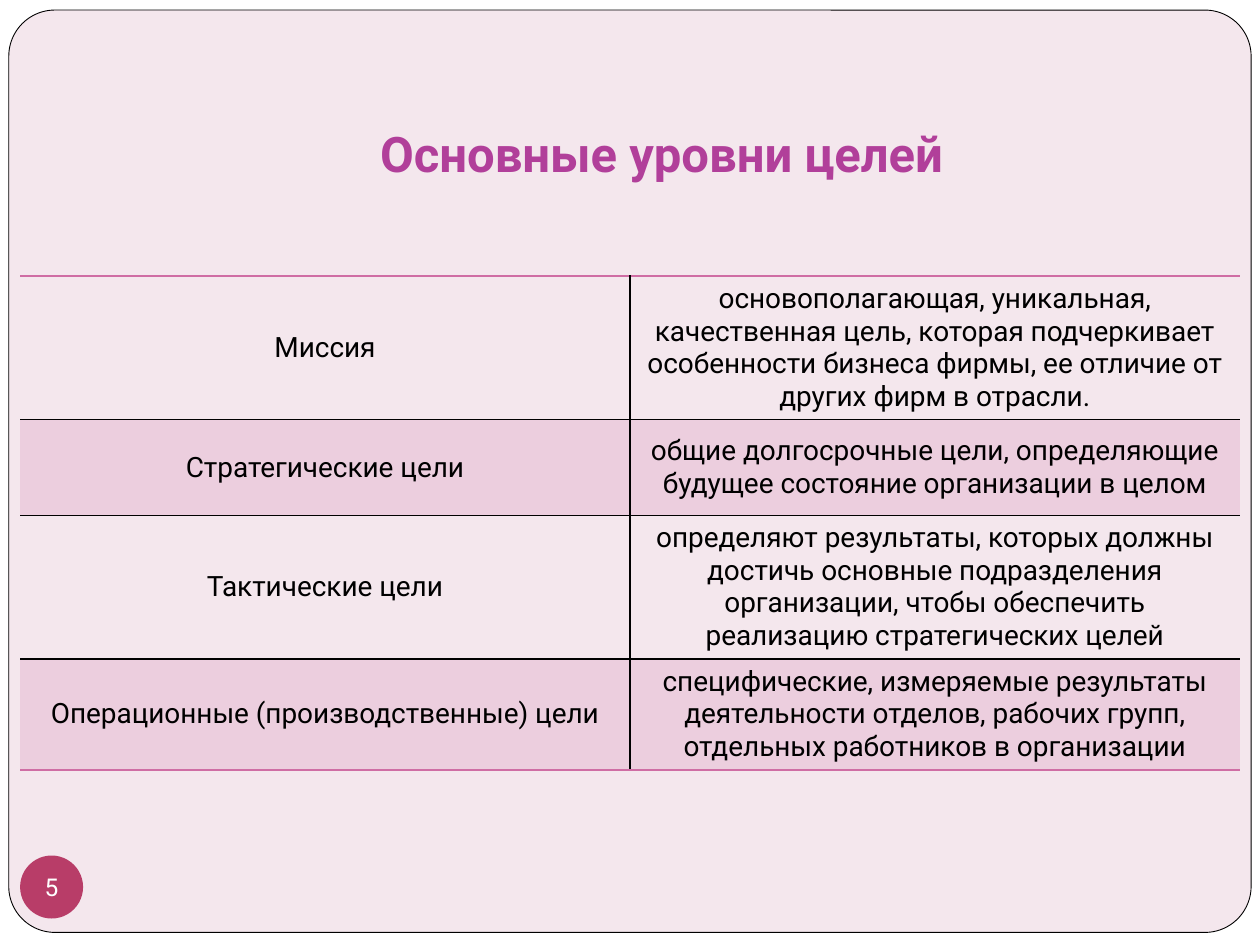
"""Build the slide on the main levels of goals."""
import pptx
import pptx.util
import pptx.dml.color
import pptx.enum.shapes
import pptx.enum.text
import pptx.oxml
import pptx.oxml.ns

Inches = pptx.util.Inches
RGBColor = pptx.dml.color.RGBColor
SHAPE = pptx.enum.shapes.MSO_SHAPE
ANCHOR = pptx.enum.text.MSO_ANCHOR

WHITE = RGBColor(0xFF, 0xFF, 0xFF)
BLACK = RGBColor(0, 0, 0)
PANEL = RGBColor(0xF4, 0xE7, 0xED)
PURPLE = RGBColor(0xB1, 0x3F, 0x9A)
CRIMSON = RGBColor(0xB8, 0x3D, 0x68)
PINK = RGBColor(0xCF, 0x6D, 0xA4)


def write(frame, text, size=16, color=BLACK, bold=False, anchor=ANCHOR.MIDDLE):
    frame.vertical_anchor = anchor
    para = frame.paragraphs[0]
    para.alignment = pptx.enum.text.PP_ALIGN.CENTER
    span = para.add_run()
    span.text = text
    span.font.name = "Roboto"
    span.font.size = pptx.util.Pt(size)
    span.font.bold = bold
    span.font.color.rgb = color


def edge(side, color):
    fill = f'<a:solidFill><a:srgbClr val="{color}"/></a:solidFill>' if color else "<a:noFill/>"
    names = pptx.oxml.ns.nsdecls("a")
    return pptx.oxml.parse_xml(f'<a:ln{side} {names} w="12700">{fill}</a:ln{side}>')


deck = pptx.Presentation()
deck.slide_width, deck.slide_height = Inches(10), Inches(7.5)
page = deck.slides.add_slide(deck.slide_layouts[5])
page.background.fill.solid()
page.background.fill.fore_color.rgb = WHITE

panel = page.shapes.add_shape(
    SHAPE.ROUNDED_RECTANGLE, Inches(0.07), Inches(0.08), Inches(9.86), Inches(7.32))
panel.adjustments[0] = 0.05
panel.shadow.inherit = False
panel.fill.solid()
panel.fill.fore_color.rgb = PANEL
panel.line.color.rgb = BLACK
panel.line.width = pptx.util.Pt(0.5)

title = page.shapes.title
title.element.addprevious(panel.element)
title.left, title.top, title.width, title.height = map(Inches, (1, 0.3, 8.5, 1.25))
title.text_frame.margin_bottom = Inches(0.1)
write(title.text_frame, "Основные уровни целей", size=28, color=PURPLE, bold=True,
      anchor=ANCHOR.BOTTOM)

badge = page.shapes.add_shape(
    SHAPE.OVAL, Inches(0.16), Inches(6.79), Inches(0.5), Inches(0.5))
badge.shadow.inherit = False
badge.fill.solid()
badge.fill.fore_color.rgb = CRIMSON
badge.line.fill.background()
frame = badge.text_frame
frame.margin_left = frame.margin_right = frame.margin_top = frame.margin_bottom = 0
frame.word_wrap = False
write(frame, "5", size=14, color=WHITE)

levels = [
    ("Миссия", "основополагающая, уникальная, качественная цель, которая подчеркивает "
     "особенности бизнеса фирмы, ее отличие от других фирм в отрасли.", 1.14),
    ("Стратегические цели", "общие долгосрочные цели, определяющие будущее состояние "
     "организации в целом", 0.76),
    ("Тактические цели", "определяют результаты, которых должны достичь основные "
     "подразделения организации, чтобы обеспечить реализацию стратегических целей", 1.14),
    ("Операционные (производственные) цели", "специфические, измеряемые результаты "
     "деятельности отделов, рабочих групп, отдельных работников в организации", 0.88),
]
table = page.shapes.add_table(
    len(levels), 2, Inches(0.16), Inches(2.19), Inches(9.68),
    Inches(sum(level[2] for level in levels))).table
table.first_row = table.horz_banding = False

for row, (name, meaning, height) in enumerate(levels):
    table.rows[row].height = Inches(height)
    for column, text in enumerate((name, meaning)):
        cell = table.cell(row, column)
        write(cell.text_frame, text)
        cell.vertical_anchor = ANCHOR.MIDDLE
        properties = cell._tc.get_or_add_tcPr()
        if row % 2:
            cell.fill.solid()
            cell.fill.fore_color.rgb = PINK
            tint = properties.find(".//" + pptx.oxml.ns.qn("a:srgbClr"))
            tint.append(pptx.oxml.parse_xml(
                f'<a:alpha {pptx.oxml.ns.nsdecls("a")} val="20000"/>'))
        else:
            cell.fill.background()
        borders = {
            "L": BLACK if column == 1 else None,
            "R": BLACK if column == 0 else None,
            "T": PINK if row == 0 else BLACK,
            "B": PINK if row == len(levels) - 1 else BLACK,
        }
        for place, (side, color) in enumerate(borders.items()):
            properties.insert(place, edge(side, color))

deck.save("out.pptx")
